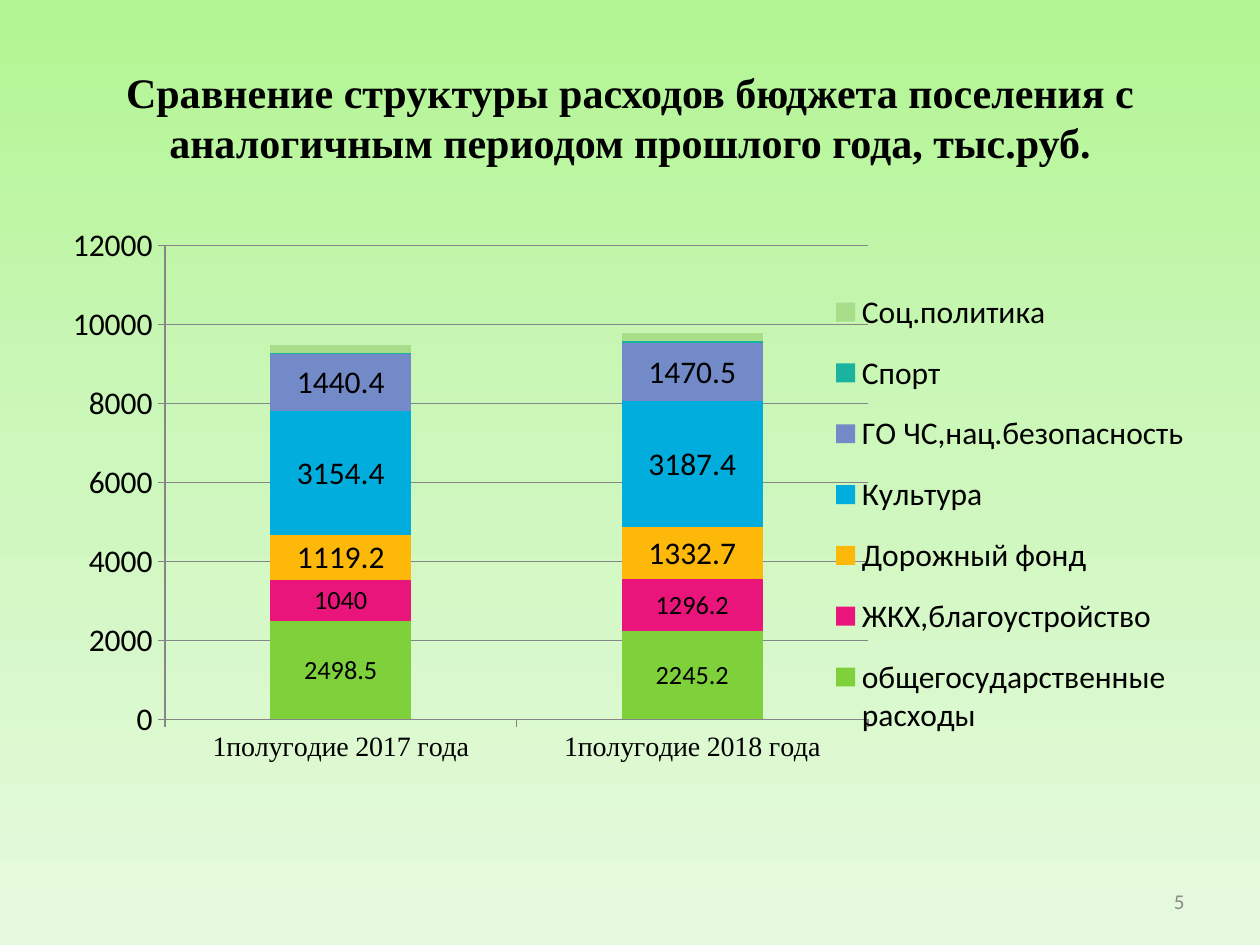
from dataclasses import dataclass

import pptx
import pptx.chart.data
import pptx.dml.color
import pptx.enum.chart
import pptx.enum.text
import pptx.oxml
import pptx.oxml.ns
import pptx.util
from pptx.util import Inches


@dataclass(frozen=True)
class Theme:
    serif: str = "Times New Roman"
    sans: str = "Calibri"
    text: str = "000000"
    muted: str = "898989"
    axis: str = "868686"
    background: tuple = ((0, "B2F592"), (50, "CEF7BD"), (100, "E7FADF"))
    title_size: int = 24
    chart_size: int = 18
    category_size: int = 16
    small_label_size: int = 15
    number_size: int = 12


THEME = Theme()
PERIODS = ("1полугодие 2017 года", "1полугодие 2018 года")
# name, values, colour, label size (None: no labels)
EXPENSES = (
    ("общегосударственные расходы", (2498.5, 2245.2), "7FD13B", THEME.small_label_size),
    ("ЖКХ,благоустройство", (1040, 1296.2), "EA157A", THEME.small_label_size),
    ("Дорожный фонд", (1119.2, 1332.7), "FEB80A", THEME.chart_size),
    ("Культура", (3154.4, 3187.4), "00ADDC", THEME.chart_size),
    ("ГО ЧС,нац.безопасность", (1440.4, 1470.5), "738AC8", THEME.chart_size),
    ("Спорт", (20, 40), "1AB39F", None),
    ("Соц.политика", (200, 200), "A8DD8A", None),
)


def rgb(value):
    return pptx.dml.color.RGBColor.from_string(value)


def style_font(font, size, name, color, bold=False):
    font.size = pptx.util.Pt(size)
    font.name = name
    font.bold = bold
    font.color.rgb = rgb(color)


def set_background(s):
    fill = s.background.fill
    fill.gradient()
    grad = s.background._cSld.bg.bgPr.find(pptx.oxml.ns.qn("a:gradFill"))
    stops = "".join(
        f'<a:gs pos="{pos * 1000}"><a:srgbClr val="{color}"/></a:gs>'
        for pos, color in THEME.background
    )
    new = pptx.oxml.parse_xml(
        f'<a:gradFill {pptx.oxml.ns.nsdecls("a")} rotWithShape="1">'
        f'<a:gsLst>{stops}</a:gsLst><a:lin ang="5400000" scaled="0"/></a:gradFill>'
    )
    grad.getparent().replace(grad, new)


def write_text(sp, text, align, **font):
    tf = sp.text_frame
    tf.word_wrap = True
    tf.vertical_anchor = pptx.enum.text.MSO_ANCHOR.MIDDLE
    tf.text = text
    p = tf.paragraphs[0]
    p.alignment = align
    style_font(p.runs[0].font, **font)


def add_title(s, text):
    sp = s.shapes.title
    sp.left, sp.top = Inches(0.5), Inches(0.3)
    sp.width, sp.height = Inches(9), Inches(1.25)
    write_text(sp, text, pptx.enum.text.PP_ALIGN.CENTER, size=THEME.title_size,
               name=THEME.serif, color=THEME.text, bold=True)


def add_page_number(s, number):
    sp = s.shapes.add_textbox(Inches(7.17), Inches(6.95), Inches(2.33), Inches(0.4))
    write_text(sp, number, pptx.enum.text.PP_ALIGN.RIGHT, size=THEME.number_size,
               name=THEME.sans, color=THEME.muted)


def layout_xml(x, y, w, h, inner=False):
    """Manual chart layout, in fractions of the chart area."""
    target = '<c:layoutTarget val="inner"/>' if inner else ""
    return pptx.oxml.parse_xml(
        f'<c:layout {pptx.oxml.ns.nsdecls("c")}><c:manualLayout>{target}'
        '<c:xMode val="edge"/><c:yMode val="edge"/>'
        f'<c:x val="{x}"/><c:y val="{y}"/><c:w val="{w}"/><c:h val="{h}"/>'
        '</c:manualLayout></c:layout>'
    )


def place_plot(chart):
    area = chart._chartSpace.chart.plotArea
    for old in area.findall(pptx.oxml.ns.qn("c:layout")):
        area.remove(old)
    area.insert(0, layout_xml(0.09, 0.04, 0.62, 0.76, inner=True))


def add_legend(chart):
    chart.has_legend = True
    legend = chart.legend
    legend.position = pptx.enum.chart.XL_LEGEND_POSITION.RIGHT
    legend.include_in_layout = False
    element = legend._element
    for old in element.findall(pptx.oxml.ns.qn("c:layout")):
        element.remove(old)
    position = element.find(pptx.oxml.ns.qn("c:legendPos"))
    position.addnext(layout_xml(0.67, 0.08, 0.33, 0.78))


def style_axis(axis):
    axis.major_tick_mark = pptx.enum.chart.XL_TICK_MARK.OUTSIDE
    axis.format.line.color.rgb = rgb(THEME.axis)


def style_series(series, color, label_size):
    series.format.fill.solid()
    series.format.fill.fore_color.rgb = rgb(color)
    if label_size:
        labels = series.data_labels
        labels.show_value = True
        style_font(labels.font, label_size, THEME.sans, THEME.text)


def add_expense_chart(s):
    data = pptx.chart.data.CategoryChartData()
    data.categories = PERIODS
    for name, values, _, _ in EXPENSES:
        data.add_series(name, values)
    chart = s.shapes.add_chart(
        pptx.enum.chart.XL_CHART_TYPE.COLUMN_STACKED,
        Inches(0.5), Inches(1.75), Inches(9), Inches(4.95), data,
    ).chart
    chart.has_title = False
    style_font(chart.font, THEME.chart_size, THEME.sans, THEME.text)

    plot = chart.plots[0]
    plot.vary_by_categories = False
    plot.gap_width = 150
    plot.overlap = 100
    for series, (_, _, color, label_size) in zip(plot.series, EXPENSES):
        style_series(series, color, label_size)

    style_axis(chart.category_axis)
    style_font(chart.category_axis.tick_labels.font, THEME.category_size,
               THEME.serif, THEME.text)
    axis = chart.value_axis
    style_axis(axis)
    axis.minimum_scale, axis.maximum_scale, axis.major_unit = 0, 12000, 2000
    axis.has_major_gridlines = True
    axis.major_gridlines.format.line.color.rgb = rgb(THEME.axis)
    place_plot(chart)
    add_legend(chart)


def main():
    prs = pptx.Presentation()
    prs.slide_width, prs.slide_height = Inches(10), Inches(7.5)
    s = prs.slides.add_slide(prs.slide_layouts.get_by_name("Title Only"))
    set_background(s)
    add_title(s, "Сравнение структуры расходов бюджета поселения с "
                 "аналогичным периодом прошлого года, тыс.руб.")
    add_expense_chart(s)
    add_page_number(s, "5")
    prs.save("out.pptx")


if __name__ == "__main__":
    main()
